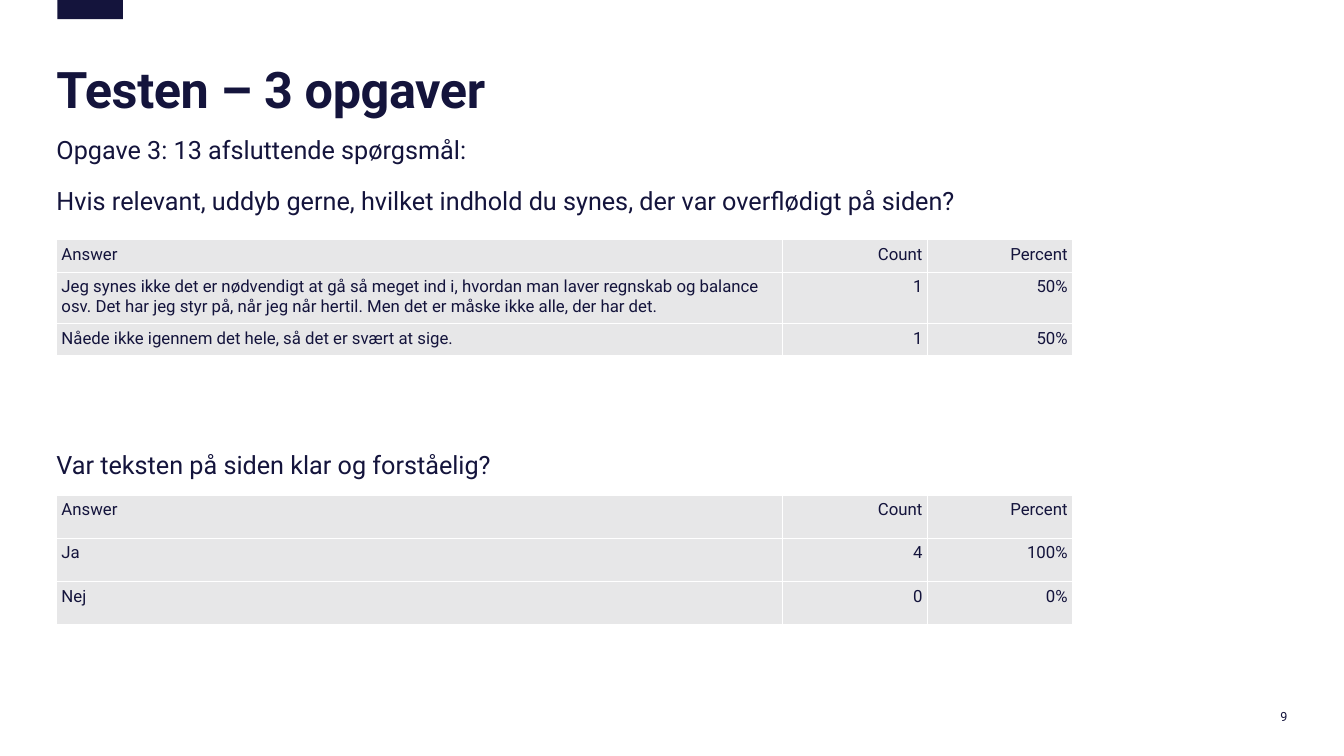
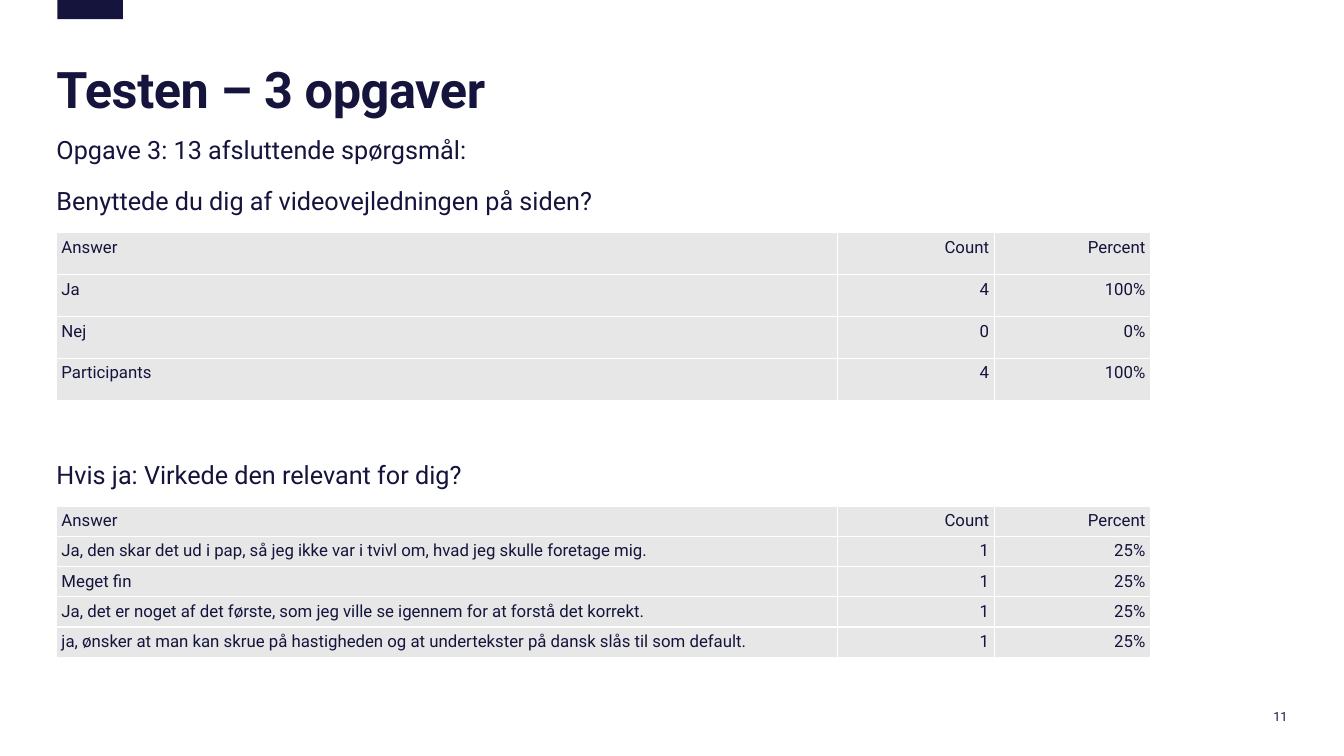
"""Build two slides of user test answers, each with two questions and their tables."""
from lxml import etree
from pptx import Presentation
from pptx.dml.color import RGBColor
from pptx.enum.shapes import MSO_SHAPE
from pptx.enum.text import MSO_ANCHOR, MSO_AUTO_SIZE, PP_ALIGN
from pptx.oxml.ns import qn
from pptx.util import Inches, Pt

COLORS = {"navy": "14143C", "cell": "E7E7E8"}
FONT = "Roboto"
LEFT = 0.56
TITLE = "Testen – 3 opgaver"
SUBTITLE = "Opgave 3: 13 afsluttende spørgsmål:"
HEADER = ("Answer", "Count", "Percent")

SLIDES = [
    {"number": "9", "columns": (7.2, 1.44, 1.44), "questions": [
        {"text": "Hvis relevant, uddyb gerne, hvilket indhold du synes, der var overflødigt på siden?",
         "top": 1.81, "table_top": 2.38, "heights": (0.32, 0.51, 0.32),
         "answers": [
             ("Jeg synes ikke det er nødvendigt at gå så meget ind i, hvordan man laver regnskab "
              "og balance osv. Det har jeg styr på, når jeg når hertil. Men det er måske ikke "
              "alle, der har det.", "1", "50%"),
             ("Nåede ikke igennem det hele, så det er svært at sige.", "1", "50%")]},
        {"text": "Var teksten på siden klar og forståelig?",
         "top": 4.43, "table_top": 4.91, "heights": (0.43,) * 3,
         "answers": [("Ja", "4", "100%"), ("Nej", "0", "0%")]},
    ]},
    {"number": "11", "columns": (7.75, 1.55, 1.55), "questions": [
        {"text": "Benyttede du dig af videovejledningen på siden?",
         "top": 1.81, "table_top": 2.31, "heights": (0.415,) * 4,
         "answers": [("Ja", "4", "100%"), ("Nej", "0", "0%"), ("Participants", "4", "100%")]},
        {"text": "Hvis ja: Virkede den relevant for dig?",
         "top": 4.53, "table_top": 5.02, "heights": (0.3,) * 5,
         "answers": [
             ("Ja, den skar det ud i pap, så jeg ikke var i tvivl om, hvad jeg skulle foretage mig.",
              "1", "25%"),
             ("Meget fin", "1", "25%"),
             ("Ja, det er noget af det første, som jeg ville se igennem for at forstå det korrekt.",
              "1", "25%"),
             ("ja, ønsker at man kan skrue på hastigheden og at undertekster på dansk slås til "
              "som default.", "1", "25%")]},
    ]},
]


def rgb(name):
    return RGBColor.from_string(COLORS[name])


def write(tf, text, size, margin=0.0, align=PP_ALIGN.LEFT, bold=False):
    tf.text = text
    tf.word_wrap = True
    tf.margin_left = tf.margin_right = tf.margin_top = tf.margin_bottom = Inches(margin)
    return style(tf.paragraphs[0], size, align, bold)


def style(p, size, align, bold):
    p.alignment = align
    font = p.runs[0].font
    font.name, font.size, font.bold = FONT, Pt(size), bold
    font.color.rgb = rgb("navy")
    return p


def place(sp, left, top, width, height):
    sp.left, sp.top, sp.width, sp.height = map(Inches, (left, top, width, height))
    sp.text_frame.auto_size = MSO_AUTO_SIZE.NONE
    sp.text_frame.vertical_anchor = MSO_ANCHOR.TOP


def add_text(s, left, top, width, height):
    sp = s.shapes.add_textbox(0, 0, 0, 0)
    place(sp, left, top, width, height)
    return sp


def write_line(sp, text):
    p = write(sp.text_frame, text, 18)
    p.line_spacing, p.space_before, p.space_after = 1.1, Pt(0), Pt(12)
    return p


def add_frame(s, number):
    band = s.shapes.add_shape(MSO_SHAPE.RECTANGLE, Inches(0.57), 0, Inches(0.65), Inches(0.19))
    band.shadow.inherit = False
    band.fill.solid()
    band.fill.fore_color.rgb = rgb("navy")
    band.line.fill.background()

    title, body = s.shapes.title, s.placeholders[1]
    place(title, LEFT, 0.65, 5.9, 1.01)
    p = write(title.text_frame, TITLE, 36, bold=True)
    p.line_spacing = 0.89
    p.runs[0]._r.get_or_add_rPr().set("spc", "-30")

    place(body, LEFT, 1.3, 5.9, 0.64)
    pPr = write_line(body, SUBTITLE)._p.get_or_add_pPr()
    pPr.set("marL", "0")
    pPr.set("indent", "0")
    etree.SubElement(pPr, qn("a:buNone"))

    page = add_text(s, 11.04, 7.03, 1.73, 0.15)
    write(page.text_frame, number, 9, align=PP_ALIGN.RIGHT)
    page.text_frame.vertical_anchor = MSO_ANCHOR.BOTTOM


def add_answers(s, question, columns):
    rows, heights = [HEADER, *question["answers"]], question["heights"]
    table = s.shapes.add_table(
        len(rows), len(columns), Inches(LEFT), Inches(question["table_top"]),
        Inches(sum(columns)), Inches(sum(heights))).table
    table.horz_banding = False
    for column, width in zip(table.columns, columns):
        column.width = Inches(width)
    for row, height, values in zip(table.rows, heights, rows):
        row.height = Inches(height)
        for i, (cell, value) in enumerate(zip(row.cells, values)):
            cell.fill.solid()
            cell.fill.fore_color.rgb = rgb("cell")
            cell.margin_left = cell.margin_right = Inches(0.05)
            cell.margin_top = cell.margin_bottom = Inches(0.05)
            cell.text_frame.text = value
            style(cell.text_frame.paragraphs[0], 12,
                  PP_ALIGN.RIGHT if i else PP_ALIGN.LEFT, False)


def main():
    prs = Presentation()
    prs.slide_width, prs.slide_height = Inches(13.33), Inches(7.5)
    for content in SLIDES:
        s = prs.slides.add_slide(prs.slide_layouts[1])
        add_frame(s, content["number"])
        for question in content["questions"]:
            write_line(add_text(s, LEFT, question["top"], 10.58, 0.81), question["text"])
            add_answers(s, question, content["columns"])
    prs.save("out.pptx")


if __name__ == "__main__":
    main()
